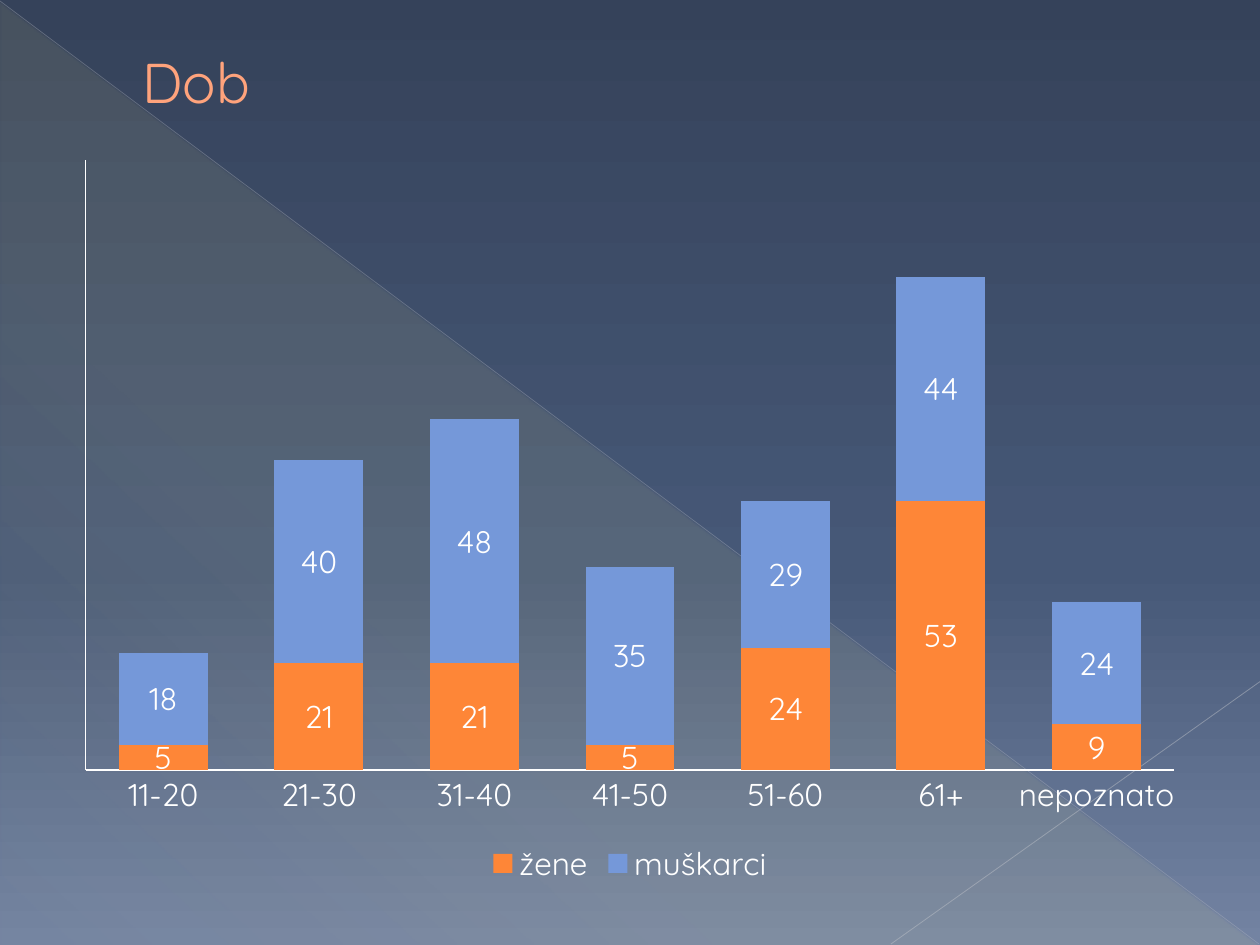
import pptx
import pptx.util
import pptx.chart.data
import pptx.dml.color
import pptx.enum.chart
import pptx.enum.shapes
import pptx.enum.text
import pptx.oxml
import pptx.oxml.ns
from lxml import etree

Cm, Pt = pptx.util.Cm, pptx.util.Pt
RGB = pptx.dml.color.RGBColor
XL = pptx.enum.chart
qn = pptx.oxml.ns.qn

WHITE = RGB(0xFF, 0xFF, 0xFF)
NAVY = RGB(0x35, 0x42, 0x5A)
SLATE = RGB(0x46, 0x58, 0x77)
MIST = RGB(0x73, 0x83, 0xA2)
CREAM = RGB(0xFF, 0xF3, 0x9D)
GREY = RGB(0xBA, 0xBD, 0xC4)
PALE = RGB(0xC1, 0xC4, 0xCA)
PEACH = RGB(0xFF, 0xA3, 0x7C)
RUST = RGB(0xB0, 0x5D, 0x26)
ORANGE = RGB(0xFE, 0x86, 0x37)
BLUE = RGB(0x75, 0x98, 0xD9)

AGES = ["11-20", "21-30", "31-40", "41-50", "51-60", "61+", "nepoznato"]
SERIES = [
    ("žene", [5, 21, 21, 5, 24, 53, 9], ORANGE),
    ("muškarci", [18, 40, 48, 35, 29, 44, 24], BLUE),
]


def put(item, values):
    for name, value in values.items():
        setattr(item, name, value)


def add(parent, tag, **attrs):
    node = etree.SubElement(parent, qn(tag))
    for name, value in attrs.items():
        node.set(name, str(value))
    return node


def tint(parent, color, alpha=100):
    """Add a colour with an opacity in percent."""
    node = add(parent, "a:srgbClr", val=color)
    if alpha < 100:
        add(node, "a:alpha", val=alpha * 1000)


class Deck:
    """Holds the text style and the current slide."""

    def __init__(self, font):
        self.font = font
        self.file = pptx.Presentation()
        put(self.file, {"slide_width": Cm(25.4), "slide_height": Cm(19.05)})
        self.slide = self.file.slides.add_slide(self.file.slide_layouts[6])
        self.shapes = self.slide.shapes

    def blend(self, fill, root, angle, stops):
        """Fill with (percent, colour, opacity) stops, angle clockwise."""
        fill.gradient()
        fill.gradient_angle = 360 - angle
        group = root.find(".//" + qn("a:gsLst"))
        for old in list(group):
            group.remove(old)
        for pos, color, alpha in stops:
            tint(add(group, "a:gs", pos=pos * 1000), color, alpha)

    def back(self, angle, stops):
        self.blend(self.slide.background.fill, self.slide._element, angle, stops)

    def wedge(self, box, angle, stops):
        kind = pptx.enum.shapes.MSO_SHAPE.RIGHT_TRIANGLE
        shape = self.shapes.add_shape(kind, *map(Cm, box))
        shape.shadow.inherit = False
        shape.line.fill.background()
        self.blend(shape.fill, shape._element, angle, stops)

    def line(self, ends, color, width, alpha):
        kind = pptx.enum.shapes.MSO_CONNECTOR.STRAIGHT
        line = self.shapes.add_connector(kind, *map(Cm, ends))
        line.line.width = Pt(width)
        line.line.color.rgb = color
        node = line._element.find(".//" + qn("a:ln")).find(".//" + qn("a:srgbClr"))
        add(node, "a:alpha", val=alpha * 1000)
        add(line._element.spPr, "a:effectLst")

    def title(self, box, text, indent):
        frame = self.shapes.add_textbox(*map(Cm, box)).text_frame
        put(frame, {"word_wrap": True,
                    "vertical_anchor": pptx.enum.text.MSO_ANCHOR.MIDDLE})
        para = frame.paragraphs[0]
        para._p.get_or_add_pPr().set("marL", str(Cm(indent)))
        run = para.add_run()
        run.text = text
        put(run.font, {"name": self.font, "size": Pt(32)})
        run.font.color.rgb = PEACH
        edge = etree.Element(qn("a:ln"), w=str(Pt(0.5)))
        tint(add(edge, "a:solidFill"), RUST)
        run._r.get_or_add_rPr().insert(0, edge)

    def chart(self, box, cats, series):
        data = pptx.chart.data.CategoryChartData()
        data.categories = cats
        for name, values, _ in series:
            data.add_series(name, values)
        kind = XL.XL_CHART_TYPE.COLUMN_STACKED
        chart = self.shapes.add_chart(kind, *map(Cm, box), data).chart
        put(chart, {"has_title": False, "has_legend": True})
        put(chart.font, {"name": self.font, "size": Pt(18)})
        chart.font.color.rgb = WHITE
        put(chart.legend, {"position": XL.XL_LEGEND_POSITION.BOTTOM,
                           "include_in_layout": False})
        plain = {"major_tick_mark": XL.XL_TICK_MARK.NONE,
                 "minor_tick_mark": XL.XL_TICK_MARK.NONE,
                 "has_major_gridlines": False}
        for axis in (chart.category_axis, chart.value_axis):
            put(axis, plain)
            axis.format.line.width = Pt(0.75)
            axis.format.line.color.rgb = WHITE
        put(chart.value_axis, {
            "minimum_scale": 0, "maximum_scale": 120,
            "tick_label_position": XL.XL_TICK_LABEL_POSITION.NONE})
        plot = chart.plots[0]
        put(plot, {"gap_width": 75, "overlap": 100,
                   "vary_by_categories": False, "has_data_labels": True})
        put(plot.data_labels, {"show_value": True,
                               "position": XL.XL_LABEL_POSITION.CENTER})
        for bars, (_, _, color) in zip(plot.series, series):
            bars.format.fill.solid()
            bars.format.fill.fore_color.rgb = color
        self.place(chart, {"x": 0.02, "y": 0.02, "w": 0.96, "h": 0.82})

    def place(self, chart, area):
        """Pin the inner plot area to fractions of the chart."""
        root = chart._chartSpace.find(".//" + qn("c:plotArea"))
        node = root.find(qn("c:layout"))
        if node is None:
            node = etree.Element(qn("c:layout"))
            root.insert(0, node)
        inner = add(node, "c:manualLayout")
        add(inner, "c:layoutTarget", val="inner")
        for side in "xy":
            add(inner, f"c:{side}Mode", val="edge")
        for side, value in area.items():
            add(inner, f"c:{side}", val=value)


def main():
    deck = Deck("Quicksand")
    deck.back(90, [(0, NAVY, 100), (60, SLATE, 100), (100, MIST, 100)])
    deck.wedge((0.02, 0.05, 25.35, 19), 133,
               [(0, CREAM, 10), (70, CREAM, 8), (100, CREAM, 1)])
    deck.line((0, 0.02, 25.38, 19.03), GREY, 0.39, 35)
    deck.line((25.4, 13.74, 17.96, 19.03), PALE, 0.47, 45)
    deck.title((1.27, 0.74, 6.43, 1.78), "Dob", 1.35)
    deck.chart((1.27, 2.92, 22.86, 15.01), AGES, SERIES)
    deck.file.save("out.pptx")


if __name__ == "__main__":
    main()
